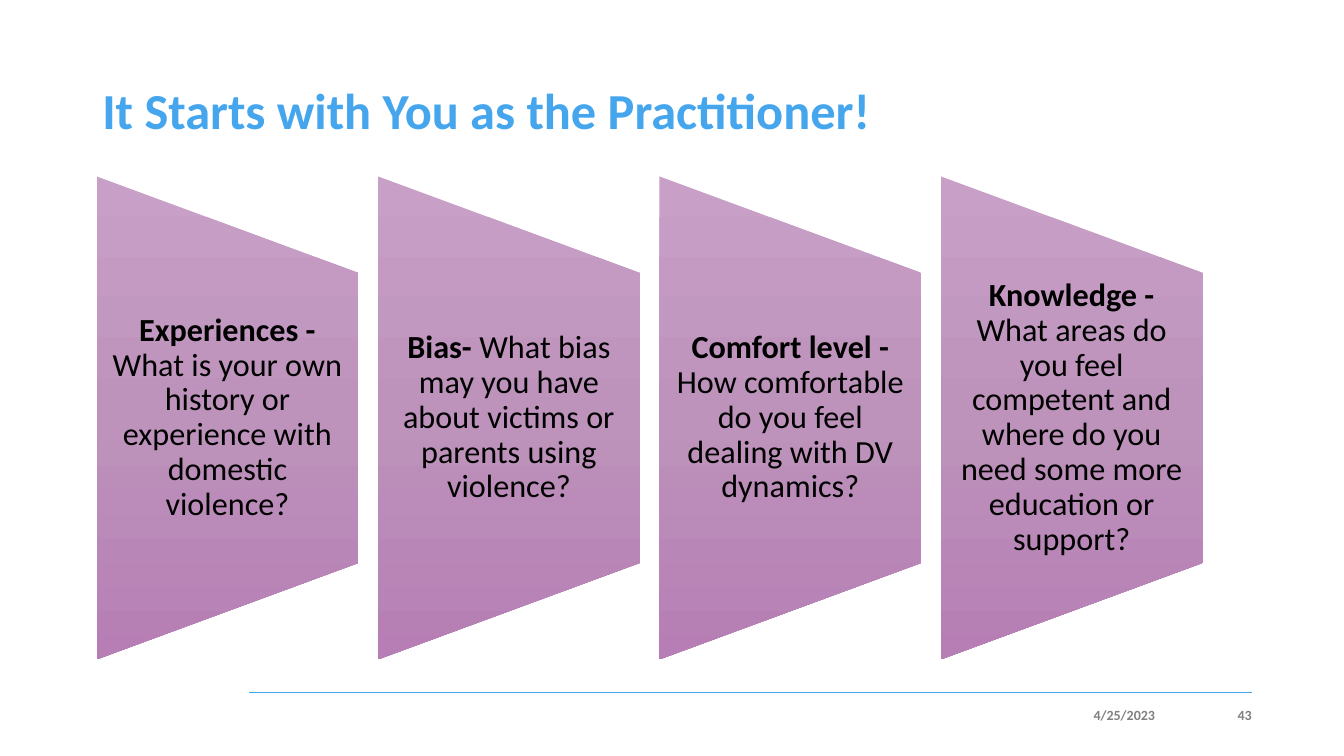
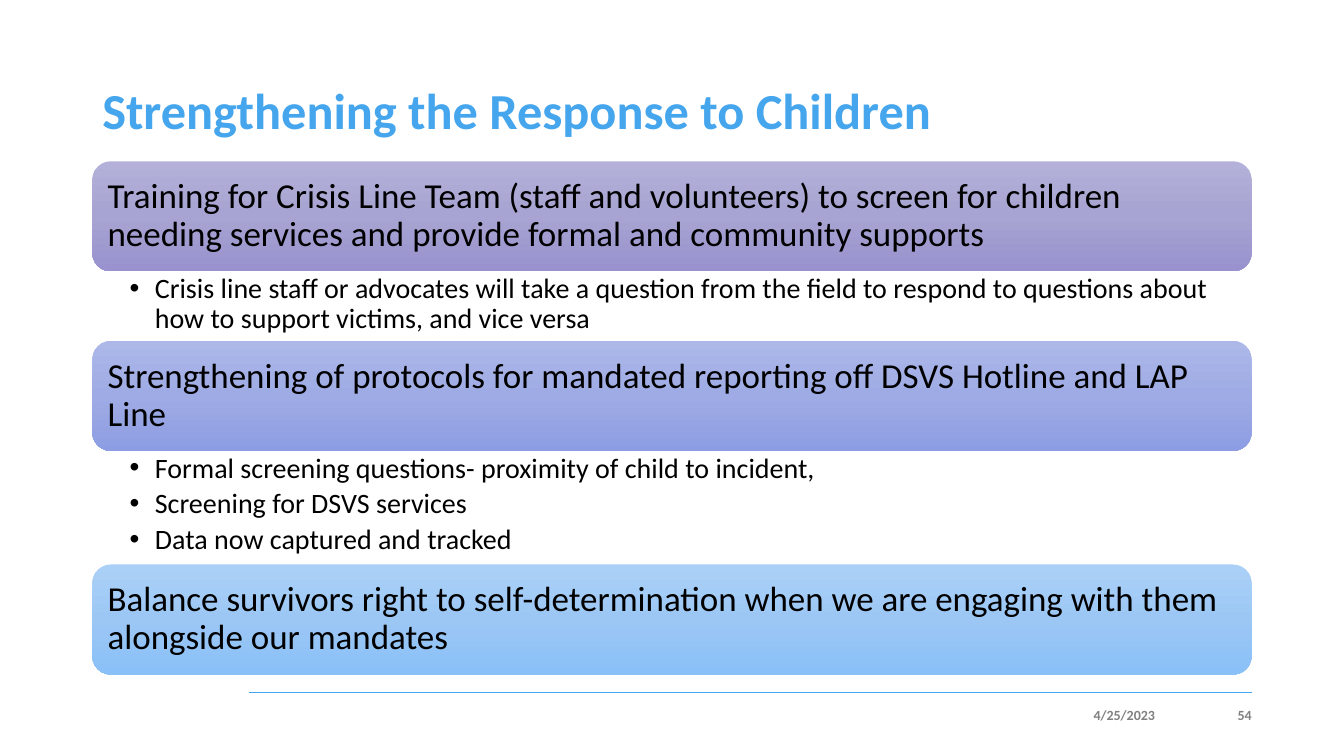
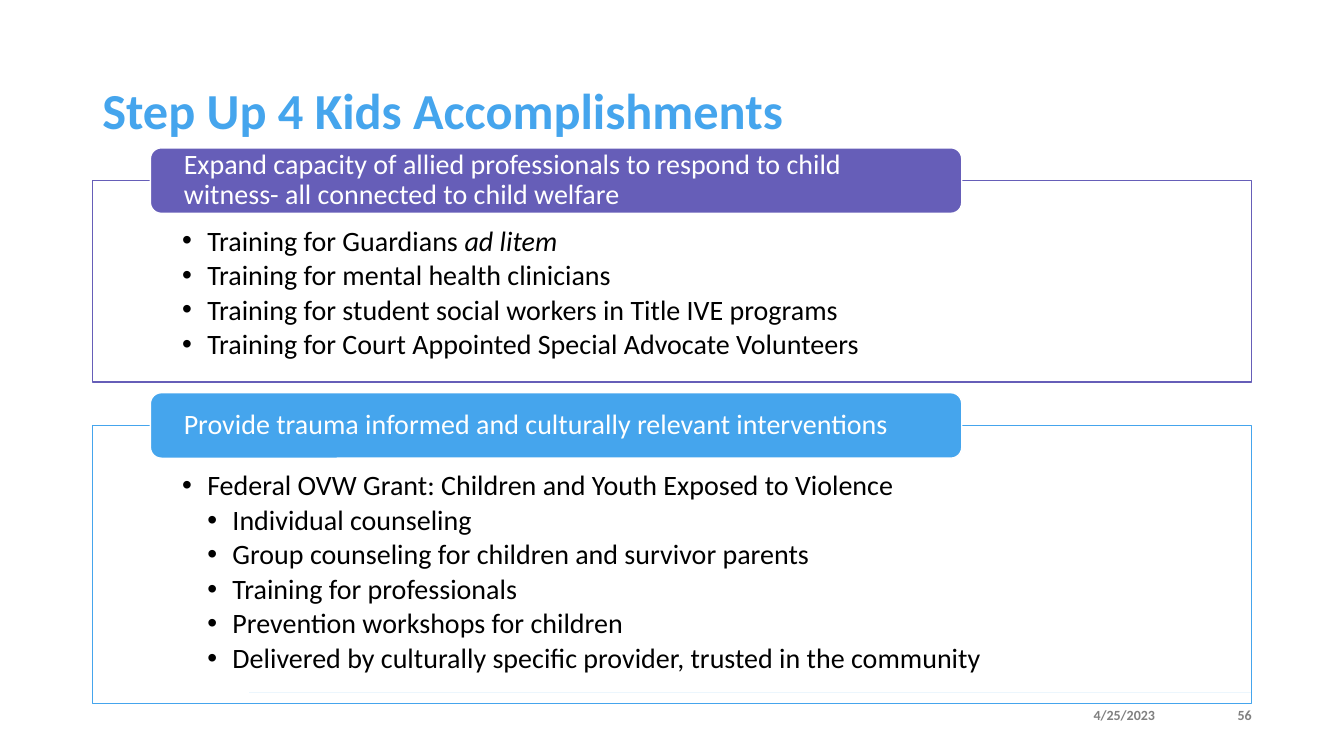
"""Three slides on domestic violence practice, laid out on a grid of 160 columns by 90 rows."""
from lxml.etree import SubElement
from pptx import Presentation
from pptx.dml.color import RGBColor
from pptx.enum.shapes import MSO_CONNECTOR as Connector, MSO_SHAPE as Preset
from pptx.enum.text import MSO_ANCHOR as Anchor, PP_ALIGN as Align
from pptx.oxml import parse_xml
from pptx.oxml.ns import nsdecls, qn
from pptx.util import Inches, Pt

COLORS = {
    "blue": "45A5ED", "purple": "665EB8", "gray": "808080", "black": "000000", "white": "FFFFFF",
    "mauve": ("C89FC6", "BD93BB", "B67EB4"),
    "lavender": ("B3B1D9", "A7A3D2", "9893CE"),
    "periwinkle": ("ADB8E9", "9FABE4", "8D9DE4"),
    "sky": ("ABD0F7", "9CC7F5", "89C0F7"),
}
FONT = "Calibri"
CELL = Inches(1) / 12
LEFT, WIDTH, RIGHT = 11, 138, 149
INDENT = Inches(0.25)


def add_box(slide, box, preset=None, fill=None, line=None, gradient=None):
    """Add a text box, or a preset shape with a plain or a gradient fill."""
    place = [round(cells * CELL) for cells in box]
    if preset is None:
        return slide.shapes.add_textbox(*place)
    shape = slide.shapes.add_shape(preset, *place)
    shape.shadow.inherit = False
    if gradient:
        stops = "".join(
            f'<a:gs pos="{index * 50000}"><a:srgbClr val="{color}"/></a:gs>'
            for index, color in enumerate(COLORS[gradient]))
        shape._element.spPr.insert(2, parse_xml(
            f'<a:gradFill {nsdecls("a")} rotWithShape="0"><a:gsLst>{stops}</a:gsLst>'
            '<a:lin ang="5400000" scaled="0"/></a:gradFill>'))
    else:
        shape.fill.solid()
        shape.fill.fore_color.rgb = RGBColor.from_string(COLORS[fill])
    if line:
        shape.line.color.rgb = RGBColor.from_string(COLORS[line])
        shape.line.width = Pt(1)
    else:
        shape.line.fill.background()
    return shape


def write(shape, paragraphs, size, color="black", margins=(0.1, 0.05, 0.1, 0.05),
          anchor=Anchor.MIDDLE, align=Align.LEFT, spacing=0.9, after=0):
    """Fill a shape with paragraphs, each a bullet level and its (text, style) runs."""
    frame = shape.text_frame
    frame.word_wrap = True
    frame.vertical_anchor = anchor
    (frame.margin_left, frame.margin_top,
     frame.margin_right, frame.margin_bottom) = map(Inches, margins)
    for index, (level, runs) in enumerate(paragraphs):
        paragraph = frame.add_paragraph() if index else frame.paragraphs[0]
        if level:
            properties = paragraph._p.get_or_add_pPr()
            properties.set("marL", str(level * INDENT))
            properties.set("indent", str(-INDENT))
            SubElement(properties, qn("a:buFont"), typeface="Arial")
            SubElement(properties, qn("a:buChar"), char="•")
        paragraph.alignment = align
        paragraph.line_spacing = spacing
        paragraph.space_after = Pt(after)
        for text, style in runs:
            run = paragraph.add_run()
            run.text = text
            run.font.name = FONT
            run.font.size = Pt(size)
            run.font.bold = style == "bold"
            run.font.italic = style == "italic"
            run.font.color.rgb = RGBColor.from_string(COLORS[color])


presentation = Presentation()
presentation.slide_width = round(160 * CELL)
presentation.slide_height = round(90 * CELL)

slides = []
for title, number in [
    ("It Starts with You as the Practitioner!", "43"),
    ("Strengthening the Response to Children", "54"),
    ("Step Up 4 Kids Accomplishments", "56"),
]:
    slide = presentation.slides.add_slide(presentation.slide_layouts[6])
    slides.append(slide)
    rule = slide.shapes.add_connector(
        Connector.STRAIGHT, *[round(cells * CELL) for cells in (29.65, 82.45, RIGHT, 82.45)])
    rule.line.color.rgb = RGBColor.from_string(COLORS["blue"])
    rule.line.width = Pt(0.5)
    SubElement(rule._element.spPr, qn("a:effectLst"))
    write(add_box(slide, (LEFT, 4.8, WIDTH, 17.4)), [(0, [(title, "bold")])], 36, "blue")
    for text, left, width in [("4/25/2023", 101.5, 36), (number, 139.5, 9.5)]:
        write(add_box(slide, (left, 83.4, width, 3.36)), [(0, [(text, "bold")])], 10, "gray",
              margins=(0, 0.05, 0, 0.05), align=Align.RIGHT, spacing=1.0)

practitioner, response, accomplishments = slides

panel_width, panel_height, panel_step, middle = 31.2, 57.5, 33.5, 49.75
for column, (topic, question) in enumerate([
    ("Experiences - ", "What is your own history or experience with domestic violence?"),
    ("Bias- ", "What bias may you have about victims or parents using violence?"),
    ("Comfort level - ", "How comfortable do you feel dealing with DV dynamics?"),
    ("Knowledge - ", "What areas do you feel competent and where do you need some more "
                     "education or support?"),
]):
    left = 11.5 + column * panel_step
    panel = add_box(
        practitioner,
        (left - (panel_height - panel_width) / 2, middle - panel_width / 2,
         panel_height, panel_width),
        Preset.FLOWCHART_MANUAL_OPERATION, gradient="mauve")
    panel.rotation = 270
    label = add_box(practitioner, (left, middle - panel_height * 0.3,
                                   panel_width, panel_height * 0.6))
    write(label, [(0, [(topic, "bold"), (question, "")])], 23,
          margins=(0.16, 0, 0.16, 0), align=Align.CENTER)

top, band_height = 19.2, 13.1
for gradient, heading, list_height, items in [
    ("lavender", "Training for Crisis Line Team (staff and volunteers) to screen for children "
                 "needing services and provide formal and community supports", 8.27,
     ["Crisis line staff or advocates will take a question from the field to respond to "
      "questions about how to support victims, and vice versa"]),
    ("periwinkle", "Strengthening of protocols for mandated reporting off DSVS Hotline and "
                   "LAP Line", 13.53,
     ["Formal screening questions- proximity of child to incident,",
      "Screening for DSVS services", "Data now captured and tracked"]),
    ("sky", "Balance survivors right to self-determination when we are engaging with them "
            "alongside our mandates", 0, []),
]:
    band = add_box(response, (LEFT, top, WIDTH, band_height),
                   Preset.ROUNDED_RECTANGLE, gradient=gradient)
    write(band, [(0, [(heading, "")])], 25, margins=(0.1, 0.1, 0.1, 0.1))
    top += band_height
    if items:
        details = add_box(response, (LEFT, top, WIDTH, list_height))
        write(details, [(1, [(item, "")]) for item in items], 20,
              margins=(0.37, 0.03, 0.19, 0.03), anchor=Anchor.TOP, after=4)
    top += list_height

top = 21.5
for color, heading, height, items in [
    ("purple", "Expand capacity of allied professionals to respond to child witness- "
               "all connected to child welfare", 24,
     [(1, [("Training for Guardians ", ""), ("ad litem", "italic")]),
      (1, [("Training for mental health clinicians", "")]),
      (1, [("Training for student social workers in Title IVE programs", "")]),
      (1, [("Training for Court Appointed Special Advocate Volunteers", "")])]),
    ("blue", "Provide trauma informed and culturally relevant interventions", 33.1,
     [(1, [("Federal OVW Grant: Children and Youth Exposed to Violence", "")]),
      (2, [("Individual counseling", "")]),
      (2, [("Group counseling for children and survivor parents", "")]),
      (2, [("Training for professionals", "")]),
      (2, [("Prevention workshops for children", "")]),
      (2, [("Delivered by culturally specific provider, trusted in the community", "")])]),
]:
    frame_box = add_box(accomplishments, (LEFT, top, WIDTH, height),
                        Preset.RECTANGLE, fill="white", line=color)
    fill_color = frame_box._element.spPr.find(qn("a:solidFill")).find(qn("a:srgbClr"))
    SubElement(fill_color, qn("a:alpha"), val="90000")
    write(frame_box, items, 20, margins=(0.89, 0.46, 0.89, 0.16), anchor=Anchor.TOP, after=3)
    tab = add_box(accomplishments, (17.9, top - 3.9, 96.6, 7.8),
                  Preset.ROUNDED_RECTANGLE, fill=color, line="white")
    write(tab, [(0, [(heading, "")])], 20, "white", margins=(0.3, 0, 0.3, 0))
    top += height + 5.15

presentation.save("out.pptx")
